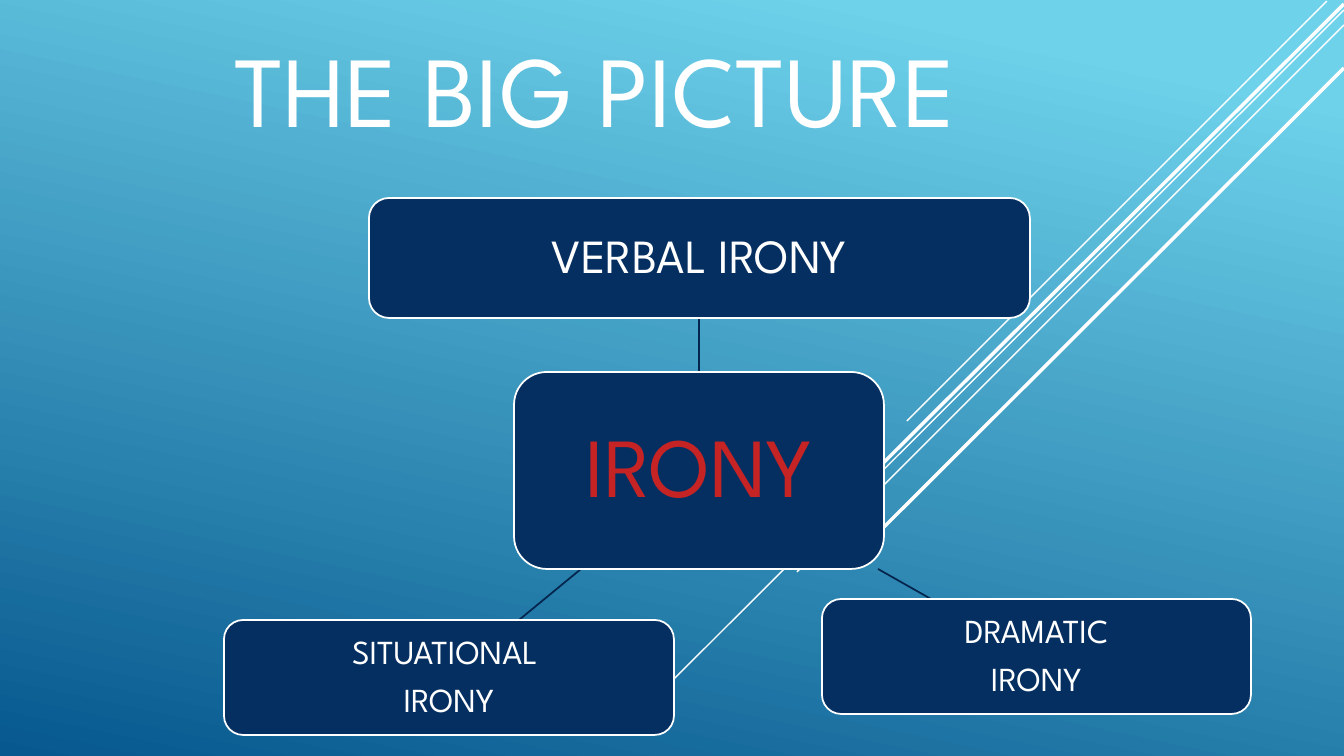
from lxml.etree import SubElement
from pptx import Presentation
from pptx.dml.color import RGBColor
from pptx.enum.shapes import MSO_CONNECTOR, MSO_SHAPE
from pptx.enum.text import MSO_ANCHOR, PP_ALIGN
from pptx.oxml.ns import qn
from pptx.util import Pt

PX = 914400 / 100.8
FONT = "League Spartan"
WHITE = RGBColor(0xFF, 0xFF, 0xFF)
NAVY = RGBColor(0x05, 0x2F, 0x61)
LINK = RGBColor(0x04, 0x26, 0x4E)
RED = RGBColor(0xC6, 0x23, 0x24)
SKY = RGBColor(0x6E, 0xD2, 0xEB)
DEEP = RGBColor(0x06, 0x58, 0x8E)

TITLE = "THE BIG PICTURE"
TITLE_BOX = (224, 0, 943, 154)
# lines, box (left, top, width, height), inset, size, colour
BOXES = [
    (["IRONY"], (514, 372, 370, 197), 27, 60, RED),
    (["VERBAL IRONY"], (369, 198, 661, 120), 15, 34, WHITE),
    (["DRAMATIC", "IRONY"], (822, 599, 429, 115), 13, 24, WHITE),
    (["SITUATIONAL ", "IRONY"], (224, 620, 450, 115), 13, 24, WHITE),
]
# start, end, width in points
RAYS = [
    ((1327, 1), (907, 421), 1),
    ((1344, 10), (673, 680), 1),
    ((1344, 25), (797, 572), 1),
    ((1344, 4), (808, 538), 2.5),
    ((1344, 68), (865, 546), 2.5),
]
LINKS = [
    ((699, 372), (699, 318), 1.25),
    ((878, 569), (931, 599), 1.25),
    ((581, 569), (519, 620), 1.25),
]


def px(*values):
    return [round(v * PX) for v in values]


def write(tf, lines, size, color, align=PP_ALIGN.CENTER, anchor=MSO_ANCHOR.MIDDLE, after=0.35):
    """Fill a text frame; after is the paragraph gap as a share of the text size."""
    tf.word_wrap = True
    tf.vertical_anchor = anchor
    for i, line in enumerate(lines):
        p = tf.add_paragraph() if i else tf.paragraphs[0]
        p.alignment = align
        p.line_spacing = 0.9
        p.space_before = Pt(0)
        p.space_after = Pt(size * after)
        r = p.add_run()
        r.text = line
        r.font.name = FONT
        r.font.size = Pt(size)
        r.font.color.rgb = color


def draw_line(slide, start, end, width, color):
    cn = slide.shapes.add_connector(MSO_CONNECTOR.STRAIGHT, *px(*start, *end))
    cn.line.color.rgb = color
    cn.line.width = Pt(width)
    SubElement(cn._element.spPr, qn("a:effectLst"))


def draw_box(slide, lines, box, inset, size, color):
    sp = slide.shapes.add_shape(MSO_SHAPE.ROUNDED_RECTANGLE, *px(*box))
    sp.shadow.inherit = False
    sp.fill.solid()
    sp.fill.fore_color.rgb = NAVY
    sp.line.color.rgb = WHITE
    sp.line.width = Pt(1.25)
    tf = sp.text_frame
    tf.margin_left, tf.margin_top, tf.margin_right, tf.margin_bottom = px(*[inset] * 4)
    write(tf, lines, size, color)


def main():
    prs = Presentation()
    prs.slide_width, prs.slide_height = px(1344, 756)
    slide = prs.slides.add_slide(prs.slide_layouts[5])

    fill = slide.background.fill
    fill.gradient()
    fill.gradient_angle = 360 - 102
    for stop, color, position in zip(fill.gradient_stops, (SKY, DEEP), (0.1, 1)):
        stop.color.rgb = color
        stop.position = position

    for ray in RAYS:
        draw_line(slide, *ray, WHITE)

    title = slide.shapes.title
    title.left, title.top, title.width, title.height = px(*TITLE_BOX)
    write(title.text_frame, [TITLE], 72, WHITE, PP_ALIGN.LEFT, MSO_ANCHOR.BOTTOM, after=0)

    for link in LINKS:
        draw_line(slide, *link, LINK)
    for box in BOXES:
        draw_box(slide, *box)
    prs.save("out.pptx")


if __name__ == "__main__":
    main()
